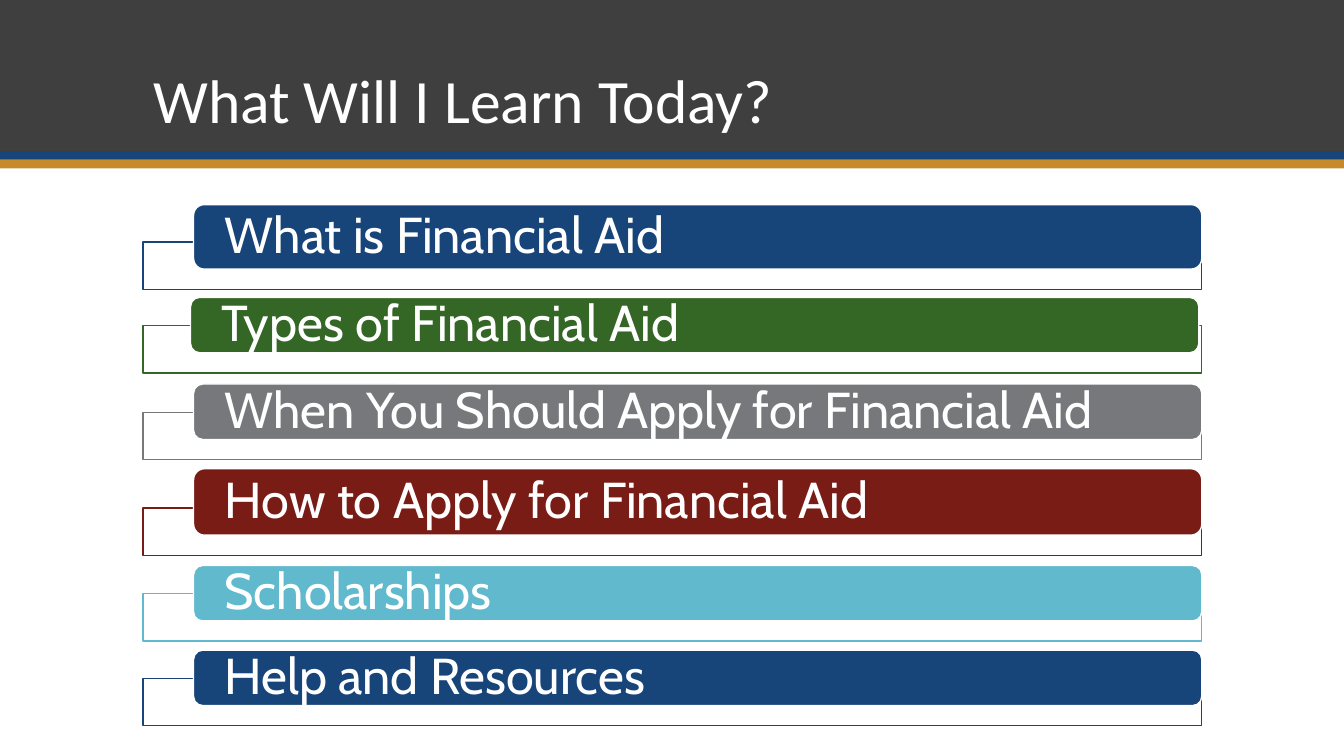
"""Build the agenda slide of a financial aid talk."""
from lxml import etree
from pptx import Presentation
from pptx.dml.color import RGBColor
from pptx.enum.shapes import MSO_SHAPE
from pptx.enum.text import MSO_ANCHOR, PP_ALIGN
from pptx.oxml.ns import qn
from pptx.util import Pt

PX = 9144
RECT, ROUND = MSO_SHAPE.RECTANGLE, MSO_SHAPE.ROUNDED_RECTANGLE
LEFT, MIDDLE, BOTTOM = PP_ALIGN.LEFT, MSO_ANCHOR.MIDDLE, MSO_ANCHOR.BOTTOM
HEX = {
    "white": "FFFFFF", "dark": "3F3F3F", "blue": "174479", "gold": "C6892B",
    "green": "346625", "gray": "76787B", "red": "7A1C16", "aqua": "60B9CD",
}


def add_box(kind, left, top, wide, tall, fill, line=None):
    box = slide.shapes.add_shape(kind, left * PX, top * PX, wide * PX, tall * PX)
    box.shadow.inherit = False
    box.fill.solid()
    box.fill.fore_color.rgb = RGBColor.from_string(HEX[fill])
    if line:
        box.line.color.rgb = RGBColor.from_string(HEX[line])
        box.line.width = Pt(1)
    else:
        box.line.fill.background()
    return box


def add_text(shape, text, font, size, anchor):
    frame = shape.text_frame
    frame.word_wrap = True
    frame.vertical_anchor = anchor
    para = frame.paragraphs[0]
    para.alignment = LEFT
    para.line_spacing = 0.9
    run = para.add_run()
    run.text = text
    run.font.name = font
    run.font.size = Pt(size)
    run.font.color.rgb = RGBColor.from_string(HEX["white"])
    return frame


deck = Presentation()
deck.slide_width, deck.slide_height = 1333 * PX, 750 * PX
slide = deck.slides.add_slide(deck.slide_layouts[5])

for top, tall, hue in [(0, 150, "dark"), (150, 9, "blue"), (158, 9, "gold")]:
    add_box(RECT, 0, top, 1333, tall, hue)

title = slide.shapes.title
title.left, title.top = 142 * PX, 28 * PX
title.width, title.height = 1050 * PX, 113 * PX
add_text(title, "What Will I Learn Today?", "Calibri", 44, BOTTOM)
slide.shapes._spTree.append(title._element)

topics = [
    ("What is Financial Aid", "blue", 192, 203, 64),
    ("Types of Financial Aid", "green", 189, 295, 55),
    ("When You Should Apply for Financial Aid", "gray", 192, 381, 55),
    ("How to Apply for Financial Aid", "red", 192, 465, 66),
    ("Scholarships", "aqua", 192, 561, 55),
    ("Help and Resources", "blue", 192, 645, 55),
]
for text, hue, left, top, tall in topics:
    tray = add_box(RECT, 142, top + tall - 27, 1050, 47, "white", hue)
    tint = tray._element.spPr.find(qn("a:solidFill"))[0]
    etree.SubElement(tint, qn("a:alpha"), val="90000")
    bar = add_box(ROUND, left, top, 1000, tall, hue, "white")
    frame = add_text(bar, text, "Cabin", 36, MIDDLE)
    frame.margin_left = frame.margin_right = 28 * PX
    frame.margin_top = frame.margin_bottom = 0

deck.save("out.pptx")
